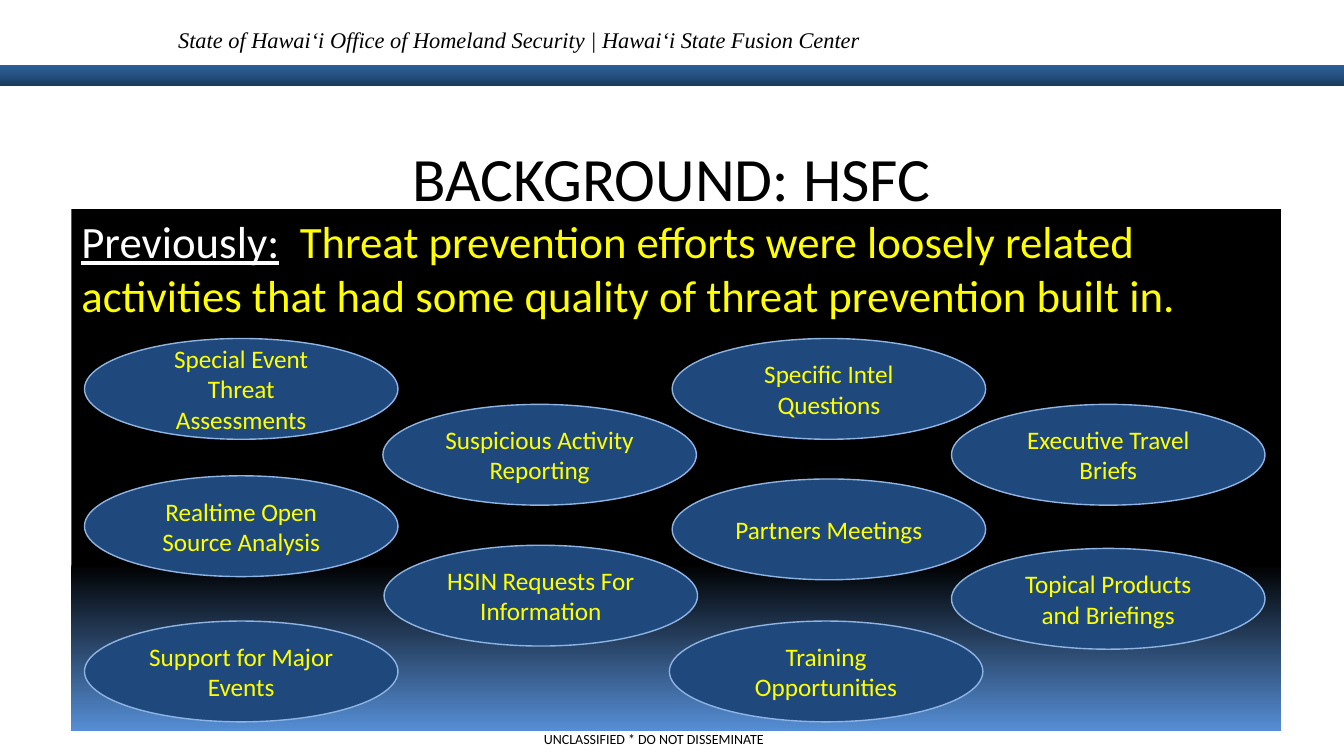
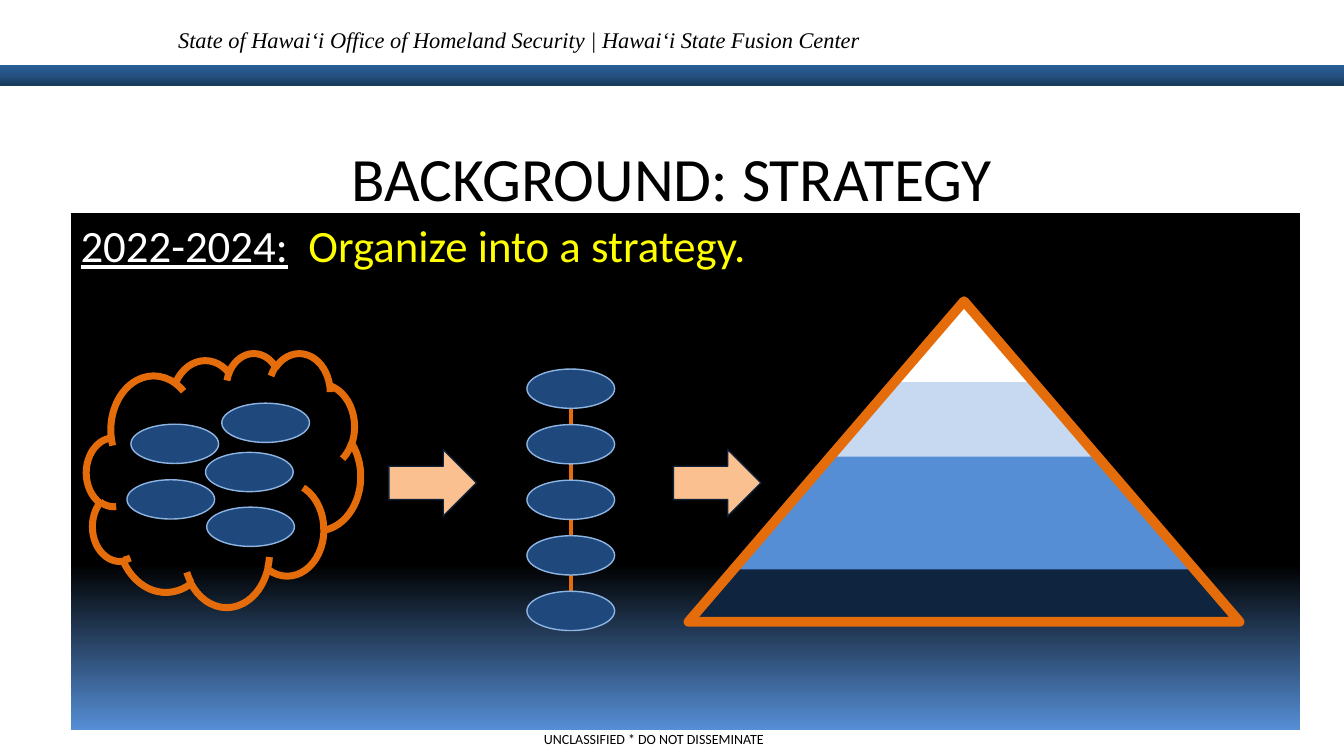
from copy import deepcopy
from typing import NamedTuple, Optional

from pptx import Presentation
from pptx.dml.color import RGBColor
from pptx.enum import shapes, text
from pptx.oxml import parse_xml
from pptx.oxml.ns import nsdecls, qn
from pptx.util import Cm, Pt

SLIDE_W, SLIDE_H = 33.87, 19.05
BLACK, WHITE, YELLOW = "000000", "FFFFFF", "FFFF00"
NAVY, SKY, ORANGE, PEACH, INK = "1F497D", "8EB4E3", "E46C0A", "FAC090", "0E2037"
BAR_STOPS = [(0, "19395B"), (0.5, "245181"), (1, "2B6099")]
PANEL_STOPS = [(0.68, BLACK), (1, "558ED5")]
BODY_FONT, HEADER_FONT = "Calibri", "Times New Roman"
SHAPE = shapes.MSO_SHAPE
HEADER = "State of Hawai‘i Office of Homeland Security | Hawai‘i State Fusion Center"
FOOTER = "UNCLASSIFIED * DO NOT DISSEMINATE"


class Box(NamedTuple):
    """Left, top, width and height in centimetres."""
    x: float
    y: float
    w: float
    h: float

    def emu(self) -> list:
        return [Cm(v) for v in self]


class Activity(NamedTuple):
    x: float
    y: float
    label: str


class Tier(NamedTuple):
    kind: int
    box: Box
    fill: str


ACTIVITIES = [
    Activity(2.13, 8.53, "Special Event Threat Assessments"),
    Activity(2.13, 11.99, "Realtime Open Source Analysis"),
    Activity(9.65, 10.19, "Suspicious Activity Reporting"),
    Activity(9.68, 13.74, "HSIN Requests For Information"),
    Activity(16.94, 8.53, "Specific Intel Questions"),
    Activity(23.98, 10.19, "Executive Travel Briefs"),
    Activity(16.94, 12.07, "Partners Meetings"),
    Activity(23.98, 13.82, "Topical Products and Briefings"),
    Activity(2.13, 15.65, "Support for Major Events"),
    Activity(16.87, 15.65, "Training Opportunities"),
]
ACTIVITY_W, ACTIVITY_H = 7.9, 2.54

DOT_W, DOT_H = 2.21, 0.99
LOOSE_DOTS = [(3.3, 10.69), (5.18, 11.4), (3.2, 12.09), (5.21, 12.78), (5.59, 10.16)]
CHAIN_X, CHAIN_Y, CHAIN_STEP, CHAIN_COUNT = 13.28, 9.3, 1.4, 5
ARROW_XS = [9.8, 16.97]

TIER_SLOPE = 0.892
TIERS = [
    Tier(SHAPE.TRAPEZOID, Box(17.22, 14.25, 14.02, 1.4), "0F243E"),
    Tier(SHAPE.ISOSCELES_TRIANGLE, Box(22.15, 7.59, 4.24, 2.54), WHITE),
    Tier(SHAPE.TRAPEZOID, Box(20.37, 9.63, 7.82, 2.54), "C6D9F1"),
    Tier(SHAPE.TRAPEZOID, Box(18.36, 11.51, 11.68, 2.84), "558ED5"),
]


def rgb(value: str) -> RGBColor:
    return RGBColor.from_string(value)


def style_font(font, size: float, color: str, name: str = BODY_FONT) -> None:
    font.size, font.name, font.color.rgb = Pt(size), name, rgb(color)


def add_shape(s, kind: int, box: Box, fill: Optional[str] = None,
              line: Optional[str] = None, width: float = 1):
    sp = s.shapes.add_shape(kind, *box.emu())
    sp.shadow.inherit = False
    if fill:
        sp.fill.solid()
        sp.fill.fore_color.rgb = rgb(fill)
    else:
        sp.fill.background()
    if line:
        sp.line.color.rgb, sp.line.width = rgb(line), Pt(width)
    else:
        sp.line.fill.background()
    return sp


def set_gradient(sp, stops: list, angle: float) -> None:
    """Fill with (position, colour) stops; the angle runs counter-clockwise."""
    sp.fill.gradient()
    sp.fill.gradient_angle = angle
    gs_list = sp.element.find(".//" + qn("a:gsLst"))
    while len(gs_list) < len(stops):
        gs_list.append(deepcopy(gs_list[0]))
    for stop, (position, color) in zip(sp.fill.gradient_stops, stops):
        stop.color.rgb, stop.position = rgb(color), position


def add_text(s, box: Box, content: str, size: float, font: str = BODY_FONT):
    tb = s.shapes.add_textbox(*box.emu())
    tb.text_frame.word_wrap = True
    p = tb.text_frame.paragraphs[0]
    p.text = content
    style_font(p.font, size, BLACK, font)
    return tb


def add_band_to_layout(s) -> None:
    """Move the header line and bar to the layout, so every slide shows them."""
    bar = add_shape(s, SHAPE.RECTANGLE, Box(0, 1.63, SLIDE_W, 0.53))
    set_gradient(bar, BAR_STOPS, 90)
    header = add_text(s, Box(4.24, 0.53, 20.22, 0.94), HEADER, 16, HEADER_FONT)
    header.text_frame.paragraphs[0].font.italic = True
    for sp in (bar, header):
        s.slide_layout.element.cSld.spTree.append(sp.element)


def new_slide(prs, title: str):
    s = prs.slides.add_slide(prs.slide_layouts[5])
    sp = s.shapes.title
    sp.left, sp.top, sp.width, sp.height = Box(0, 3.4, SLIDE_W, 2.13).emu()
    tf = sp.text_frame
    tf.text = title
    tf.auto_size = text.MSO_AUTO_SIZE.NONE
    tf.vertical_anchor = text.MSO_ANCHOR.TOP
    p = tf.paragraphs[0]
    p.alignment = text.PP_ALIGN.CENTER
    style_font(p.font, 44, BLACK)
    add_text(s, Box(13.46, 18.29, 6.93, 0.69), FOOTER, 10)
    return s


def add_panel(s, box: Box, period: str, message: str) -> None:
    sp = add_shape(s, SHAPE.RECTANGLE, box)
    set_gradient(sp, PANEL_STOPS, 270)
    tf = sp.text_frame
    tf.vertical_anchor = text.MSO_ANCHOR.TOP
    p = tf.paragraphs[0]
    p.alignment = text.PP_ALIGN.LEFT
    for content, color, underline in ((period, WHITE, True), ("  " + message, YELLOW, False)):
        r = p.add_run()
        r.text = content
        style_font(r.font, 32, color)
        r.font.underline = underline


def add_ellipse(s, box: Box, label: str = "") -> None:
    sp = add_shape(s, SHAPE.OVAL, box, NAVY, SKY)
    if label:
        p = sp.text_frame.paragraphs[0]
        p.text = label
        p.alignment = text.PP_ALIGN.CENTER
        style_font(p.font, 18, YELLOW)


def add_line(s, x: float, top: float, bottom: float) -> None:
    line = s.shapes.add_connector(shapes.MSO_CONNECTOR.STRAIGHT,
                                  Cm(x), Cm(top), Cm(x), Cm(bottom))
    line.line.color.rgb, line.line.width = rgb(ORANGE), Pt(3)
    line.element.spPr.append(parse_xml(f"<a:effectLst {nsdecls('a')}/>"))


def add_chain(s) -> None:
    """Draw evenly spaced ellipses strung on a vertical line."""
    tops = [CHAIN_Y + i * CHAIN_STEP for i in range(CHAIN_COUNT)]
    add_line(s, CHAIN_X + DOT_W / 2, tops[0], tops[-1] + DOT_H)
    for y in tops:
        add_ellipse(s, Box(CHAIN_X, y, DOT_W, DOT_H))


def add_pyramid(s) -> None:
    for tier in TIERS:
        sp = add_shape(s, tier.kind, tier.box, tier.fill)
        if tier.kind == SHAPE.TRAPEZOID:
            sp.adjustments[0] = TIER_SLOPE
    add_shape(s, SHAPE.ISOSCELES_TRIANGLE, Box(17.35, 7.59, 13.89, 8.08), line=ORANGE, width=7)


def build_hsfc(prs) -> None:
    s = new_slide(prs, "BACKGROUND: HSFC")
    add_band_to_layout(s)
    add_panel(s, Box(1.8, 5.26, 30.48, 13.16), "Previously:",
              "Threat prevention efforts were loosely related activities "
              "that had some quality of threat prevention built in.")
    for a in ACTIVITIES:
        add_ellipse(s, Box(a.x, a.y, ACTIVITY_W, ACTIVITY_H), a.label)


def build_strategy(prs) -> None:
    s = new_slide(prs, "BACKGROUND: STRATEGY")
    add_panel(s, Box(1.78, 5.36, 30.99, 13.03), "2022-2024:", "Organize into a strategy.")
    for x, y in LOOSE_DOTS:
        add_ellipse(s, Box(x, y, DOT_W, DOT_H))
    add_pyramid(s)
    add_chain(s)
    add_shape(s, SHAPE.CLOUD, Box(2.18, 8.89, 6.91, 6.4), line=ORANGE, width=5)
    for x in ARROW_XS:
        add_shape(s, SHAPE.RIGHT_ARROW, Box(x, 11.33, 2.21, 1.68), PEACH, INK)


def main() -> None:
    prs = Presentation()
    prs.slide_width, prs.slide_height = Cm(SLIDE_W), Cm(SLIDE_H)
    build_hsfc(prs)
    build_strategy(prs)
    prs.save("out.pptx")


if __name__ == "__main__":
    main()
